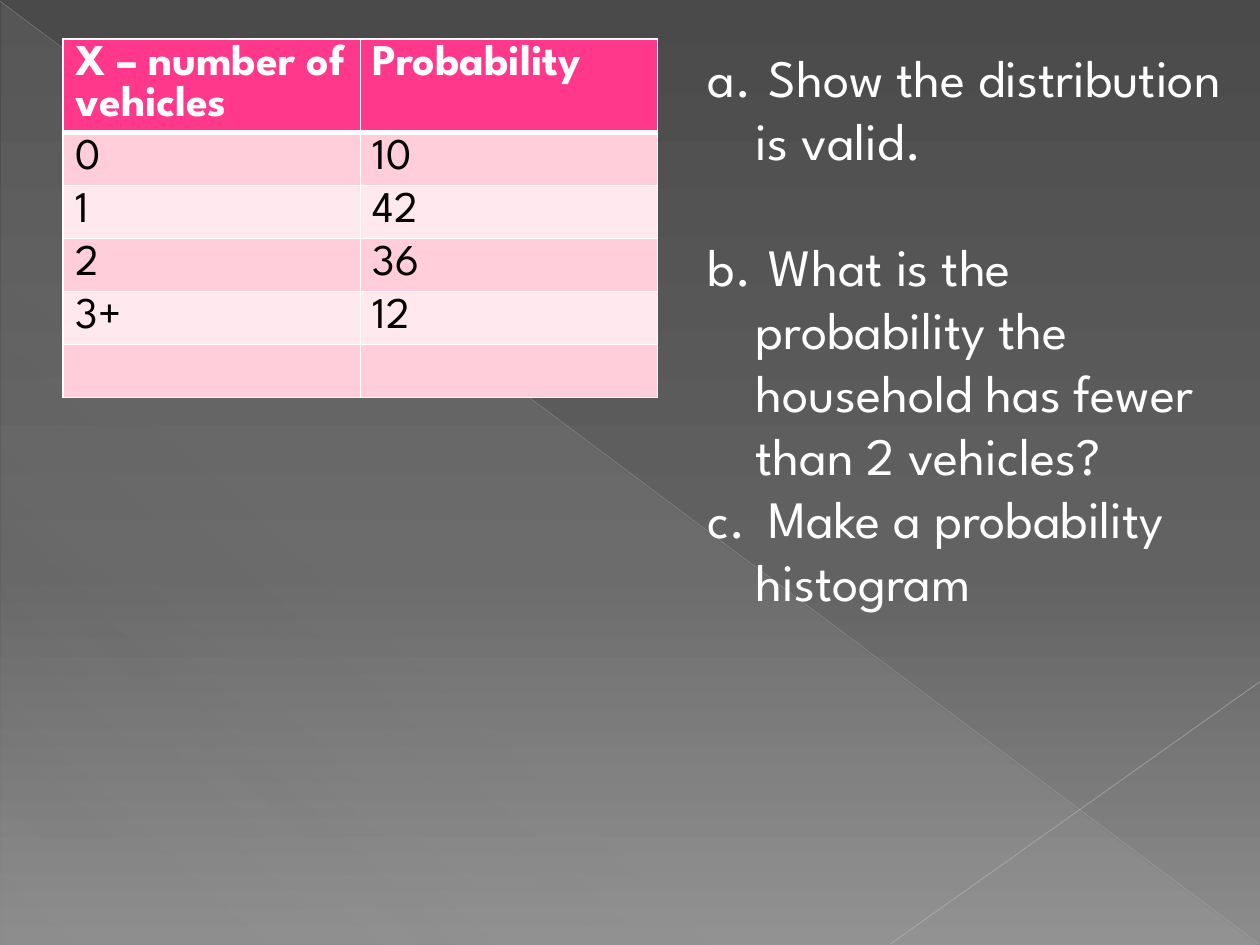
from pptx import Presentation
from pptx.dml.color import RGBColor as RGB
from pptx.enum.shapes import MSO_CONNECTOR as CONNECTOR, MSO_SHAPE as SHAPE
from pptx.oxml.ns import qn
from pptx.util import Inches, Pt
from lxml.etree import SubElement

THEME = {
    "font": "League Spartan", "table size": 25, "question size": 30,
    "light": "FFFFFF", "dark": "000000", "header": "FF388C",
    "bands": ["FFCEDA", "FFE8EE"],
    "background": [(0, "4A4A4A", 100), (60, "626262", 100), (100, "8C8C8C", 100)],
    "sheen": [(0, "D2D2D2", 10), (70, "D2D2D2", 8), (100, "D2D2D2", 1)],
}


def add_color(parent, color, opacity=100):
    node = SubElement(parent, qn("a:srgbClr"), val=color)
    if opacity < 100:
        SubElement(node, qn("a:alpha"), val=str(opacity * 1000))


def set_gradient(fill, element, stops, angle):
    fill.gradient()
    gradient = next(element.iter(qn("a:gradFill")))
    for child in list(gradient):
        gradient.remove(child)
    stop_list = SubElement(gradient, qn("a:gsLst"))
    for position, color, opacity in stops:
        stop = SubElement(stop_list, qn("a:gs"), pos=str(position * 1000))
        add_color(stop, color, opacity)
    SubElement(gradient, qn("a:lin"), ang=str(angle * 60000), scaled="0")


prs = Presentation()
prs.slide_width, prs.slide_height = Inches(10), Inches(7.5)
slide = prs.slides.add_slide(prs.slide_layouts[6])
W = prs.slide_width

# Background with a sheen over the lower left half
set_gradient(slide.background.fill, slide.background._cSld, THEME["background"], 90)
sheen = slide.shapes.add_shape(SHAPE.RIGHT_TRIANGLE, Inches(0.01), Inches(0.02),
                               Inches(9.98), Inches(7.48))
sheen.shadow.inherit = False
sheen.line.fill.background()
set_gradient(sheen.fill, sheen._element.spPr, THEME["sheen"], 133)

# Crossing hairlines
for x1, y1, x2, y2, color, width, opacity in [
    (0, 0.01, 9.99, 7.49, "BFBFBF", 0.39, 35),
    (10, 5.41, 7.07, 7.49, "C6C6C6", 0.47, 45),
]:
    hairline = slide.shapes.add_connector(
        CONNECTOR.STRAIGHT, Inches(x1), Inches(y1), Inches(x2), Inches(y2))
    hairline.line.width = Pt(width)
    hairline.line.color.rgb = RGB.from_string(color)
    line_color = next(hairline._element.spPr.iter(qn("a:srgbClr")))
    SubElement(line_color, qn("a:alpha"), val=str(opacity * 1000))
    SubElement(hairline._element.spPr, qn("a:effectLst"))

# Distribution table
distribution = [("X – number of vehicles", "Probability"),
                ("0", "10"), ("1", "42"), ("2", "36"), ("3+", "12"), ("", "")]
header_height, row_height = Inches(0.74), Inches(0.42)
table = slide.shapes.add_table(
    len(distribution), 2, int(W * 0.05), Inches(0.31), Inches(4.72),
    header_height + row_height * (len(distribution) - 1)).table
for r, values in enumerate(distribution):
    is_header = r == 0
    table.rows[r].height = header_height if is_header else row_height
    fill_color = THEME["header"] if is_header else THEME["bands"][(r - 1) % 2]
    for c, value in enumerate(values):
        cell = table.cell(r, c)
        cell.text = value
        font = cell.text_frame.paragraphs[0].font
        font.name, font.size, font.bold = THEME["font"], Pt(THEME["table size"]), is_header
        font.color.rgb = RGB.from_string(THEME["light" if is_header else "dark"])
        if not value:  # an empty cell takes its height from the end mark
            SubElement(cell.text_frame.paragraphs[0]._p, qn("a:endParaRPr"),
                       sz=str(THEME["table size"] * 100))
        properties = cell._tc.get_or_add_tcPr()
        for side in "LRTB":
            thick = (is_header and side == "B") or (r == 1 and side == "T")
            border = SubElement(properties, qn("a:ln" + side), w=str(Pt(3 if thick else 1)))
            add_color(SubElement(border, qn("a:solidFill")), THEME["light"])
        cell.fill.solid()
        cell.fill.fore_color.rgb = RGB.from_string(fill_color)

# Lettered questions, with one line of space after the first
questions = [" Show the distribution is valid.",
             " What is the probability the household has fewer than 2 vehicles?",
             " Make a probability histogram"]
question_frame = slide.shapes.add_textbox(
    Inches(5.52), Inches(0.31), Inches(4.28), Inches(6.16)).text_frame
question_frame.word_wrap = True
for i, question in enumerate(questions):
    paragraph = question_frame.paragraphs[0] if i == 0 else question_frame.add_paragraph()
    paragraph.text = question
    paragraph.space_after = Pt(36 if i == 0 else 0)
    font = paragraph.font
    font.name, font.size = THEME["font"], Pt(THEME["question size"])
    font.color.rgb = RGB.from_string(THEME["light"])
    layout = paragraph._p.get_or_add_pPr()
    layout.set("marL", str(Inches(0.38)))
    layout.set("indent", str(-Inches(0.38)))
    numbering = layout.makeelement(qn("a:buAutoNum"), {"type": "alphaLcPeriod"})
    layout.find(qn("a:defRPr")).addprevious(numbering)

prs.save("out.pptx")
